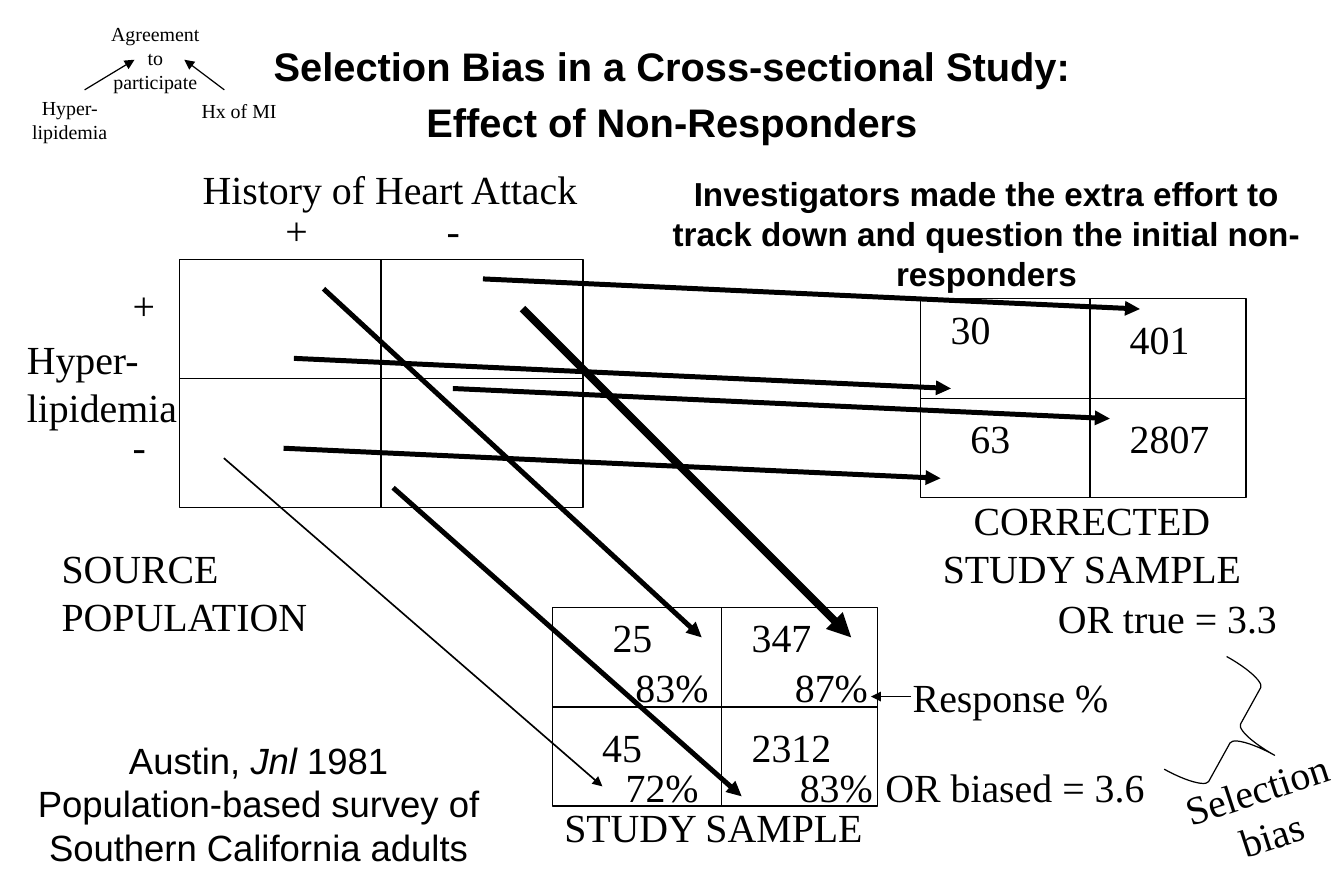
import lxml.etree
import pptx
import pptx.dml.color
import pptx.enum.shapes
import pptx.enum.text
import pptx.oxml.ns
import pptx.util

Cm = pptx.util.Cm
Pt = pptx.util.Pt
SHAPE = pptx.enum.shapes.MSO_SHAPE
ALIGN = pptx.enum.text.PP_ALIGN
BLACK = pptx.dml.color.RGBColor(0x00, 0x00, 0x00)
SERIF = "Times New Roman"
SANS = "Arial"

SOURCE = (3.81, 5.51, 8.59, 5.29)
STUDY = (11.75, 12.91, 6.92, 4.23)
CORRECTED = (19.58, 6.35, 6.92, 4.23)


def add_text(s, box, paragraphs, size=24, font=SERIF, bold=False,
             align=ALIGN.CENTER, wrap=True, gap=0, rotation=0):
    """Add a text box; a paragraph is a string or a list of (text, italic)."""
    sp = s.shapes.add_textbox(*map(Cm, box))
    sp.rotation = rotation
    tf = sp.text_frame
    tf.word_wrap = wrap
    for i, runs in enumerate(paragraphs):
        p = tf.add_paragraph() if i else tf.paragraphs[0]
        p.alignment = align
        p.space_before = Pt(gap if i else 0)
        for text, italic in [(runs, False)] if isinstance(runs, str) else runs:
            r = p.add_run()
            r.text = text
            r.font.name = font
            r.font.size = Pt(size)
            r.font.bold = bold
            r.font.italic = italic
            r.font.color.rgb = BLACK


def add_line(s, start, end, width=0.75, arrow=False):
    """Add a straight black line, with an arrowhead at its end if asked."""
    sp = s.shapes.add_connector(pptx.enum.shapes.MSO_CONNECTOR.STRAIGHT,
                                *map(Cm, start + end))
    sp.line.color.rgb = BLACK
    sp.line.width = Pt(width)
    qn = pptx.oxml.ns.qn
    if arrow:
        lxml.etree.SubElement(sp.line._get_or_add_ln(), qn("a:tailEnd"), type="triangle")
    lxml.etree.SubElement(sp._element.spPr, qn("a:effectLst"))


def add_outline(s, kind, box):
    """Add an unfilled preset shape with a thin black outline."""
    sp = s.shapes.add_shape(kind, *map(Cm, box))
    sp.shadow.inherit = False
    sp.fill.background()
    sp.line.color.rgb = BLACK
    sp.line.width = Pt(0.75)
    return sp


def inside(box, dx, dy):
    """Return the point at an offset from the corner of a box."""
    return box[0] + dx, box[1] + dy


def two_by_two(s, box, split_x, split_y, entries=()):
    """Draw a two-by-two table frame and the (text, dx, dy, width) entries in it."""
    w, h = box[2:]
    add_outline(s, SHAPE.RECTANGLE, box)
    add_line(s, inside(box, split_x, 0), inside(box, split_x, h))
    add_line(s, inside(box, 0, split_y), inside(box, w, split_y))
    for text, dx, dy, width in entries:
        add_text(s, inside(box, dx, dy) + (width, 1.27), [text])


def heading(s, box):
    """Write the two-line title."""
    add_text(s, box, ["Selection Bias in a Cross-sectional Study:",
                      "Effect of Non-Responders"], font=SANS, bold=True, gap=5)


def participation_diagram(s, box):
    """Draw the small diagram of what leads to agreement."""
    for text, dx, dy, w, h in [("Hyper-lipidemia", 0, 1.58, 2.33, 1.27),
                               ("Hx of MI", 3.6, 1.65, 2.33, 0.76),
                               ("Agreement to participate", 1.69, 0, 2.59, 1.8)]:
        add_text(s, inside(box, dx, dy) + (w, h), [text], size=12)
    for start_x, end_x in [(1.48, 2.54), (4.45, 3.6)]:
        add_line(s, inside(box, start_x, 1.58), inside(box, end_x, 0.94), arrow=True)


def source_population(s, box):
    """Draw the empty source table with its row and column labels."""
    two_by_two(s, box, 4.29, 2.54)
    for text, dx, dy, w in [("History of Heart Attack", 0.25, -2.13, 8.53),
                            ("+", 2.01, -1.27, 1.02),
                            ("-", 5.44, -1.27, 1.02)]:
        add_text(s, inside(box, dx, dy) + (w, 1.27), [text],
                 align=ALIGN.LEFT, wrap=False)
    add_text(s, inside(box, -3.49, 1.48) + (4.55, 2.31), ["Hyper-lipidemia"],
             align=ALIGN.LEFT)
    add_text(s, inside(box, -1.24, 0.33) + (1.12, 4.32), ["+", "-"],
             align=ALIGN.LEFT, gap=56)
    add_text(s, inside(box, -2.75, 5.92) + (6.35, 2.31), ["SOURCE POPULATION"],
             align=ALIGN.LEFT)


def study_sample(s, box):
    """Draw the study table with counts, response rates and odds ratio."""
    two_by_two(s, box, 3.6, 2.12, [
        ("25", 0.64, 0, 2.12), ("347", 3.81, 0, 2.12),
        ("45", 0.42, 2.33, 2.12), ("2312", 3.6, 2.33, 2.96),
        ("83%", 1.48, 1.06, 2.12), ("87%", 4.66, 1.06, 2.54),
        ("72%", 1.06, 3.18, 2.54), ("83%", 4.87, 3.18, 2.33),
        ("OR biased = 3.6", 6.56, 3.18, 6.55)])
    add_text(s, inside(box, 0, 4.03) + (6.88, 1.27), ["STUDY SAMPLE"],
             align=ALIGN.LEFT, wrap=False)
    add_text(s, inside(box, 7.41, 1.27) + (8.89, 1.27), ["Response %"],
             align=ALIGN.LEFT)
    add_line(s, inside(box, 7.62, 1.9), inside(box, 6.77, 1.9), arrow=True)


def corrected_sample(s, box):
    """Draw the corrected table with its note, caption and odds ratio."""
    two_by_two(s, box, 3.6, 2.12, [
        ("30", 0, 0, 2.12), ("401", 4.02, 0.21, 2.12),
        ("63", 0.42, 2.33, 2.12), ("2807", 3.81, 2.33, 2.96),
        ("OR true = 3.3", 2.12, 6.14, 6.25)])
    add_text(s, inside(box, -5.71, -2.79) + (14.22, 2.79),
             ["Investigators made the extra effort to track down and question "
              "the initial non-responders"], size=20, font=SANS, bold=True)
    add_text(s, inside(box, 0.2, 4.06) + (6.88, 2.29),
             ["CORRECTED", "STUDY SAMPLE"], wrap=False)


def sampling_arrows(s, source, study):
    """Draw the arrows from the source cells to both samples."""
    for start, end, width in [((7.3, 1.05), (6.35, 0.64), 4.75),
                              ((3.07, 0.63), (3.17, 0.64), 3),
                              ((4.55, 4.86), (4.02, 4.02), 3),
                              ((0.95, 4.23), (1.06, 3.81), 1)]:
        add_line(s, inside(source, *start), inside(study, *end), width, True)
    for dx, dy in [(2.44, 2.11), (6.46, 0.42), (2.22, 4.02), (5.82, 2.75)]:
        add_line(s, inside(source, dx, dy),
                 inside(source, dx + 13.97, dy + 0.64), 3, True)


def selection_bias(s, box):
    """Draw the tilted brace and its label."""
    brace = add_outline(s, SHAPE.RIGHT_BRACE, inside(box, 0.81, 0) + (1.91, 2.74))
    brace.adjustments[0] = 0.12
    brace.adjustments[1] = 0.49
    brace.rotation = 29
    add_text(s, inside(box, 0, 1.85) + (4.78, 2.29), ["Selection bias"],
             rotation=341.8)


def citation(s, box):
    """Write the study reference."""
    add_text(s, box, [[("Austin, ", False), ("Jnl", True), (" 1981", False)],
                      "Population-based survey of Southern California adults"],
             size=22, font=SANS)


def main():
    """Build the slide and save it."""
    prs = pptx.Presentation()
    prs.slide_width, prs.slide_height = Cm(28.58), Cm(19.05)
    s = prs.slides.add_slide(prs.slide_layouts[6])
    heading(s, (0, 0.76, 28.58, 2.41))
    participation_diagram(s, (0.32, 0.33, 5.93, 2.85))
    source_population(s, SOURCE)
    study_sample(s, STUDY)
    corrected_sample(s, CORRECTED)
    sampling_arrows(s, SOURCE, STUDY)
    selection_bias(s, (24.49, 14.25, 4.78, 4.14))
    citation(s, (0.32, 15.56, 10.36, 3.07))
    prs.save("out.pptx")


if __name__ == "__main__":
    main()
